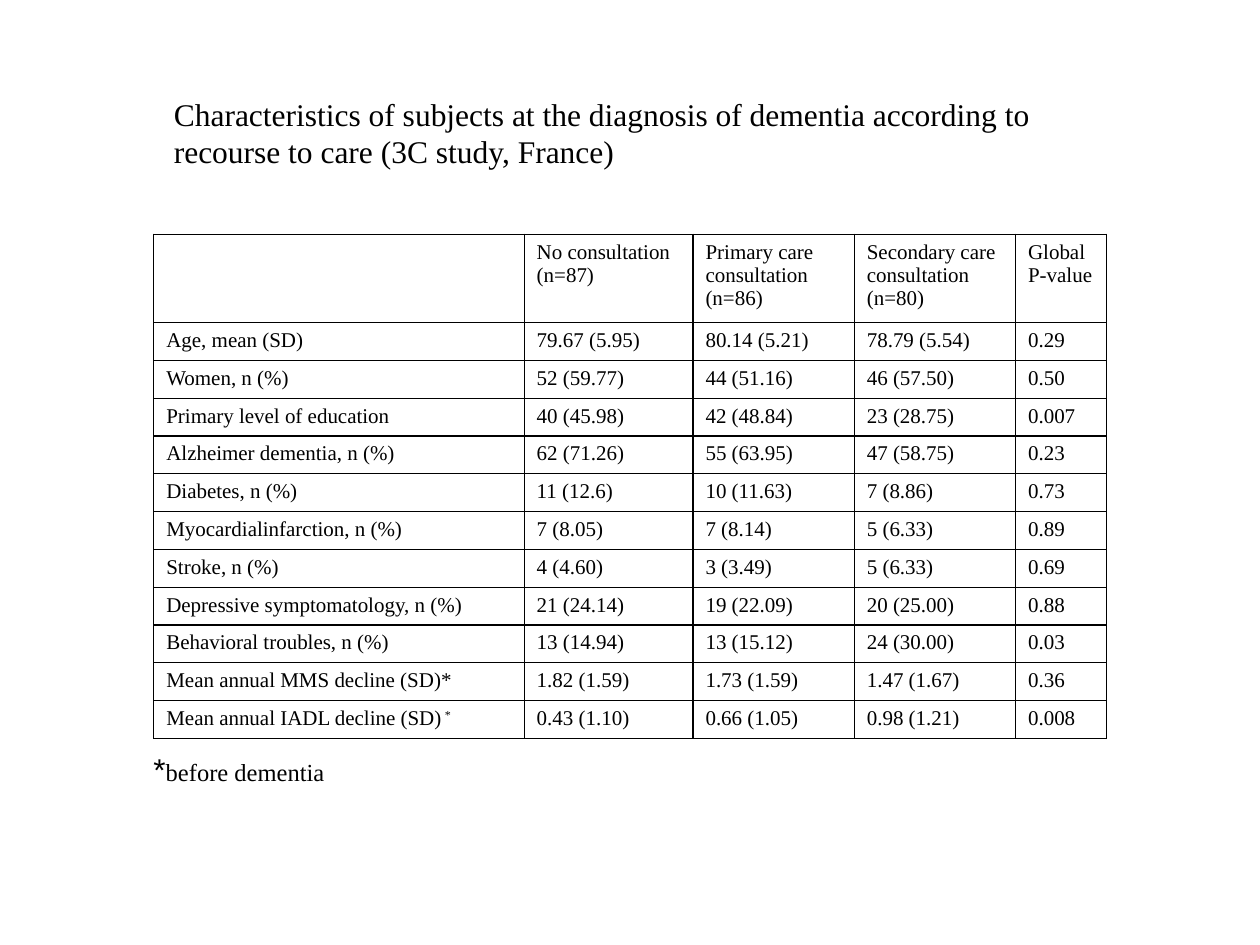
import lxml.etree
import pptx
import pptx.dml.color
import pptx.enum.text
import pptx.oxml.ns
import pptx.util

Inches = pptx.util.Inches
SERIF = "Times New Roman"
BLACK = "000000"
COL_WIDTHS = [2.94, 1.34, 1.28, 1.28, 0.72]
HEADER_HEIGHT, ROW_HEIGHT = 0.7, 0.3
THIN, THICK = 0.75, 1
HEADER = [
    [],
    ["No consultation (n=87)"],
    ["Primary care consultation", "(n=86)"],
    ["Secondary care consultation", "(n=80)"],
    ["Global", "P-value"],
]
ROWS = [
    ["Age, mean (SD)", "79.67 (5.95)", "80.14 (5.21)", "78.79 (5.54)", "0.29"],
    ["Women, n (%)", "52 (59.77)", "44 (51.16)", "46 (57.50)", "0.50"],
    ["Primary level of education", "40 (45.98)", "42 (48.84)", "23 (28.75)", "0.007"],
    ["Alzheimer dementia, n (%)", "62 (71.26)", "55 (63.95)", "47 (58.75)", "0.23"],
    ["Diabetes, n (%)", "11 (12.6)", "10 (11.63)", "7 (8.86)", "0.73"],
    ["Myocardialinfarction, n (%)", "7 (8.05)", "7 (8.14)", "5 (6.33)", "0.89"],
    ["Stroke, n (%)", "4 (4.60)", "3 (3.49)", "5 (6.33)", "0.69"],
    ["Depressive symptomatology, n (%)", "21 (24.14)", "19 (22.09)", "20 (25.00)", "0.88"],
    ["Behavioral troubles, n (%)", "13 (14.94)", "13 (15.12)", "24 (30.00)", "0.03"],
    ["Mean annual MMS decline (SD)*", "1.82 (1.59)", "1.73 (1.59)", "1.47 (1.67)", "0.36"],
    ["Mean annual IADL decline (SD)", "0.43 (1.10)", "0.66 (1.05)", "0.98 (1.21)", "0.008"],
]


def rgb(color):
    """Turn a hex string into a colour."""
    return pptx.dml.color.RGBColor.from_string(color)


def add_run(p, text, size, font=SERIF):
    """Append one formatted run to a paragraph."""
    r = p.add_run()
    r.text = text
    r.font.size = pptx.util.Pt(size)
    r.font.name = font
    r.font.bold = False
    r.font.color.rgb = rgb(BLACK)
    return r


def add_lines(tf, lines, size):
    """Write each line as a left-aligned paragraph."""
    for i, line in enumerate(lines):
        p = tf.paragraphs[0] if i == 0 else tf.add_paragraph()
        p.alignment = pptx.enum.text.PP_ALIGN.LEFT
        add_run(p, line, size)


def set_borders(cell, top, bottom):
    """Draw the four borders of a cell, with widths in points."""
    qn = pptx.oxml.ns.qn
    tc_pr = cell._tc.get_or_add_tcPr()
    widths = {"a:lnL": THIN, "a:lnR": THIN, "a:lnT": top, "a:lnB": bottom}
    for i, (tag, width) in enumerate(widths.items()):
        ln = lxml.etree.Element(qn(tag), w=str(pptx.util.Pt(width)))
        fill = lxml.etree.SubElement(ln, qn("a:solidFill"))
        lxml.etree.SubElement(fill, qn("a:srgbClr"), val=BLACK)
        tc_pr.insert(i, ln)


def place_title(s, left, top, width, height):
    """Place the slide title in its placeholder."""
    sp = s.shapes.title
    sp.left, sp.top, sp.width, sp.height = map(Inches, (left, top, width, height))
    tf = sp.text_frame
    tf.word_wrap = False
    tf.auto_size = pptx.enum.text.MSO_AUTO_SIZE.NONE
    tf.vertical_anchor = pptx.enum.text.MSO_ANCHOR.TOP
    add_lines(tf, ["Characteristics of subjects at the diagnosis of dementia according to",
                   "recourse to care (3C study, France)"], 18)


def place_table(s, left, top):
    """Place the table of subject characteristics."""
    grid = [HEADER] + [[[text] for text in row] for row in ROWS]
    heights = [HEADER_HEIGHT] + [ROW_HEIGHT] * len(ROWS)
    frame = s.shapes.add_table(len(grid), len(COL_WIDTHS), Inches(left), Inches(top),
                               Inches(sum(COL_WIDTHS)), Inches(sum(heights)))
    table = frame.table
    table.first_row = table.horz_banding = False
    for column, width in zip(table.columns, COL_WIDTHS):
        column.width = Inches(width)
    last = len(grid) - 1
    for i, (row, height) in enumerate(zip(grid, heights)):
        table.rows[i].height = Inches(height)
        for j, lines in enumerate(row):
            cell = table.cell(i, j)
            cell.fill.background()
            add_lines(cell.text_frame, lines, 12)
            set_borders(cell, THICK if i < 2 else THIN, THICK if i in (0, last) else THIN)
    mark = add_run(table.cell(last, 0).text_frame.paragraphs[0], " *", 12)
    mark.font._element.set("baseline", "30000")


def place_footnote(s, left, top, width, height):
    """Place the note that explains the asterisk."""
    sp = s.shapes.add_textbox(*map(Inches, (left, top, width, height)))
    tf = sp.text_frame
    tf.word_wrap = False
    p = tf.paragraphs[0]
    add_run(p, "*", 18, "Arial")
    add_run(p, "before dementia", 14)


def main():
    """Build and save the slide."""
    prs = pptx.Presentation()
    prs.slide_width, prs.slide_height = Inches(10), Inches(7.5)
    s = prs.slides.add_slide(prs.slide_layouts[5])
    place_title(s, 1.28, 0.7, 7.06, 0.7)
    place_table(s, 1.22, 1.86)
    place_footnote(s, 1.12, 5.9, 1.56, 0.4)
    prs.save("out.pptx")


if __name__ == "__main__":
    main()
